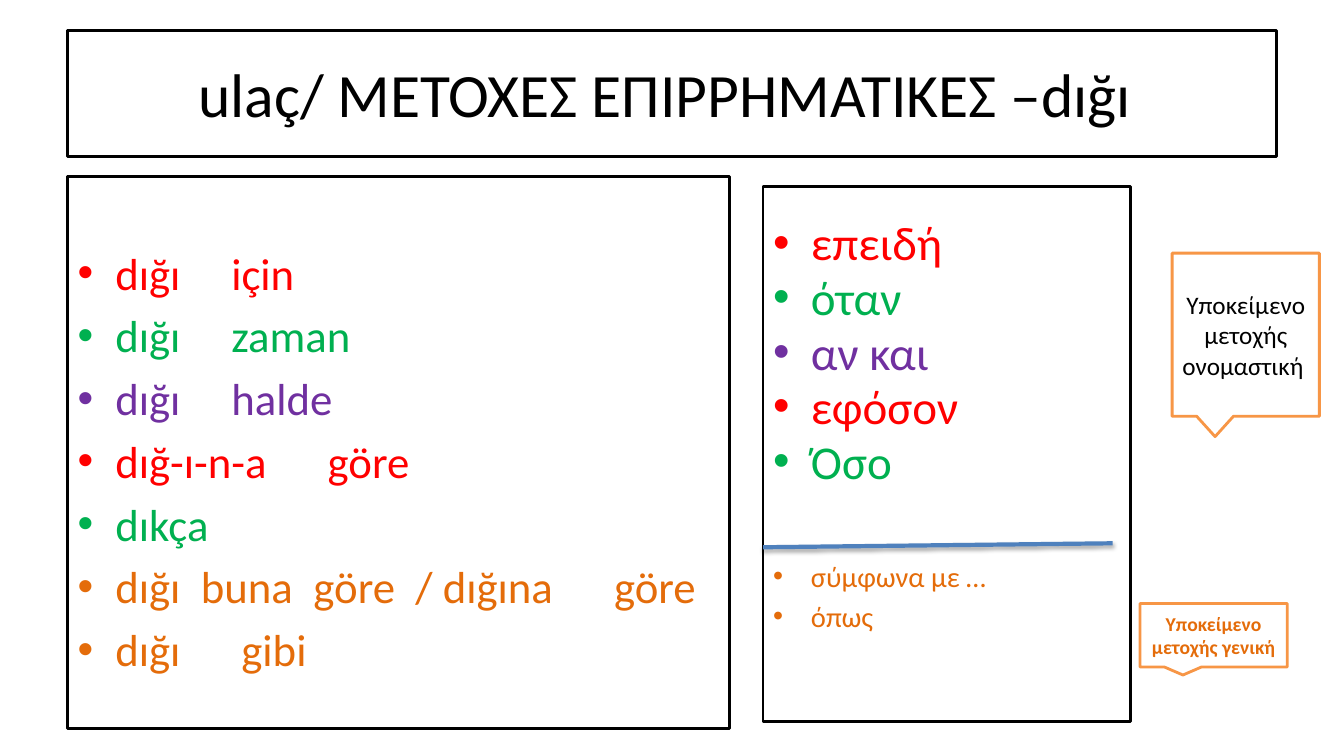
from lxml import etree
from pptx import Presentation
from pptx.dml.color import RGBColor
from pptx.enum import shapes, text
from pptx.oxml import ns
from pptx.util import Cm, Pt

BLACK = RGBColor(0x00, 0x00, 0x00)
WHITE = RGBColor(0xFF, 0xFF, 0xFF)
RED = RGBColor(0xFF, 0x00, 0x00)
GREEN = RGBColor(0x00, 0xB0, 0x50)
PURPLE = RGBColor(0x70, 0x30, 0xA0)
ORANGE = RGBColor(0xE4, 0x6C, 0x0A)
FRAME_ORANGE = RGBColor(0xF7, 0x96, 0x46)
BLUE = RGBColor(0x4F, 0x81, 0xBD)

FONT = "Calibri"
SPACE_WIDTH = 0.226
SUFFIX_SIZE = 32

SUFFIXES = [
    (RED, ["dığı", 5, "için"]),
    (GREEN, ["dığı", 5, "zaman"]),
    (PURPLE, ["dığı", 5, "halde"]),
    (RED, ["dığ-ı-n-a", 6, "göre"]),
    (GREEN, ["dıkça"]),
    (ORANGE, ["dığı", 2, "buna", 2, "göre", 2, "/ dığına", 6, "göre"]),
    (ORANGE, ["dığı", 6, "gibi"]),
]
CONJUNCTIONS = [
    (RED, "επειδή"),
    (GREEN, "όταν"),
    (PURPLE, "αν και"),
    (RED, "εφόσον"),
    (GREEN, "Όσο"),
]
COMPARISONS = ["σύμφωνα με …", "όπως"]


def add_span(para, words, size, color, bold=False):
    """Add one formatted run to a paragraph."""
    span = para.add_run()
    span.text = words
    span.font.name = FONT
    span.font.size = Pt(size)
    span.font.bold = bold
    span.font.color.rgb = color
    return span


def add_gap(para, spaces, size, color):
    """Add one space widened to the width of several."""
    span = add_span(para, " ", size, color)
    extra = (spaces - 1) * SPACE_WIDTH * size
    span.font._element.set("spc", str(round(extra * 100)))


def frame(shape, box, line_color):
    """Place a shape in its box with a white fill and a thin outline."""
    shape.left, shape.top, shape.width, shape.height = (Cm(side) for side in box)
    shape.fill.solid()
    shape.fill.fore_color.rgb = WHITE
    shape.line.color.rgb = line_color
    shape.line.width = Pt(2)
    shape.text_frame.word_wrap = True
    shape.text_frame.auto_size = text.MSO_AUTO_SIZE.NONE


def next_para(body, index):
    """Return the first paragraph or append a further one."""
    return body.add_paragraph() if index else body.paragraphs[0]


def build_title(page, box):
    """Fill the title placeholder."""
    title = page.shapes.title
    frame(title, box, BLACK)
    title.text_frame.vertical_anchor = text.MSO_ANCHOR.MIDDLE
    para = title.text_frame.paragraphs[0]
    para.alignment = text.PP_ALIGN.CENTER
    add_span(para, "ulaç/ ΜΕΤΟΧΕΣ ΕΠΙΡΡΗΜΑΤΙΚΕΣ –dığı ", 44, BLACK)


def build_suffixes(page, box):
    """List the Turkish suffixes in the left placeholder."""
    panel = page.placeholders[1]
    frame(panel, box, BLACK)
    body = panel.text_frame
    body.margin_top = Cm(1.73)
    for index, (color, parts) in enumerate(SUFFIXES):
        para = next_para(body, index)
        para.space_before = Pt(0.2 * SUFFIX_SIZE if index else 0)
        for part in parts:
            add = add_gap if isinstance(part, int) else add_span
            add(para, part, SUFFIX_SIZE, color)


def build_meanings(page, box):
    """List the Greek meanings in the right placeholder, split by a rule."""
    panel = page.placeholders[2]
    frame(panel, box, BLACK)
    body = panel.text_frame
    body.margin_top = Cm(0.69)
    for index, (color, words) in enumerate(CONJUNCTIONS):
        para = next_para(body, index)
        para.space_before = Pt(6.7 if index else 0)
        para.line_spacing = 0.8 if index else 1.0
        add_span(para, words, 33.6, color)
    for index, words in enumerate(COMPARISONS):
        para = body.add_paragraph()
        para.space_before = Pt(4.1 if index else 50)
        para.line_spacing = 1.0
        add_span(para, words, 20.4, ORANGE)
    left, top = box[:2]
    build_rule(page, (left, top + 9.09), (left + 8.81, top + 8.99))


def build_rule(page, start, end):
    """Draw the blue rule with its soft shadow."""
    rule = page.shapes.add_connector(
        shapes.MSO_CONNECTOR.STRAIGHT, *(Cm(side) for side in start + end))
    rule.line.color.rgb = BLUE
    rule.line.width = Pt(3)
    effects = etree.SubElement(rule._element.spPr, ns.qn("a:effectLst"))
    shadow = etree.SubElement(
        effects, ns.qn("a:outerShdw"), blurRad=str(Pt(3.1)),
        dist=str(Pt(1.8)), dir="5400000", rotWithShape="0")
    tint = etree.SubElement(shadow, ns.qn("a:srgbClr"), val="000000")
    etree.SubElement(tint, ns.qn("a:alpha"), val="35000")


def build_callout(page, box, words, size, color, bold=False):
    """Add a speech callout with centred words."""
    callout = page.shapes.add_shape(
        shapes.MSO_SHAPE.RECTANGULAR_CALLOUT, *(Cm(side) for side in box))
    frame(callout, box, FRAME_ORANGE)
    callout.shadow.inherit = False
    callout.text_frame.vertical_anchor = text.MSO_ANCHOR.MIDDLE
    para = callout.text_frame.paragraphs[0]
    para.alignment = text.PP_ALIGN.CENTER
    add_span(para, words, size, color, bold)


def main():
    """Build the slide and save the deck."""
    deck = Presentation()
    deck.slide_width, deck.slide_height = Cm(33.87), Cm(19.05)
    page = deck.slides.add_slide(deck.slide_layouts.get_by_name("Two Content"))
    build_title(page, (1.7, 0.76, 30.48, 3.18))
    build_suffixes(page, (1.7, 4.45, 16.69, 13.9))
    build_meanings(page, (19.23, 4.7, 9.27, 13.49))
    build_callout(page, (29.54, 6.38, 3.71, 4.11),
                  "Υποκείμενο μετοχής ονομαστική ", 18, BLACK)
    build_callout(page, (28.73, 15.21, 3.71, 1.6),
                  "Υποκείμενο μετοχής γενική", 14, ORANGE, True)
    deck.save("out.pptx")


if __name__ == "__main__":
    main()
